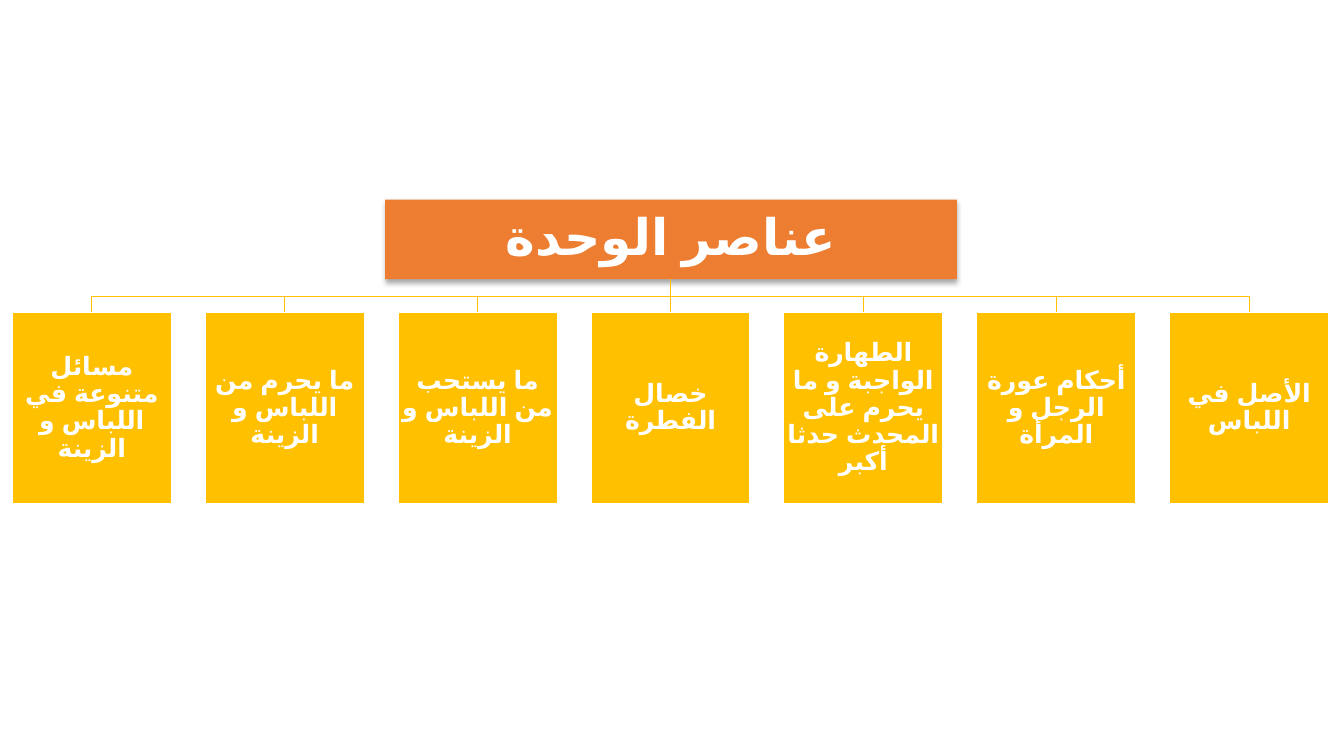
from dataclasses import dataclass
from lxml.etree import SubElement
from pptx import Presentation
from pptx.dml.color import RGBColor
from pptx.enum.shapes import MSO_SHAPE
from pptx.enum.text import MSO_ANCHOR, MSO_AUTO_SIZE, PP_ALIGN
from pptx.oxml import parse_xml
from pptx.oxml.ns import nsdecls, qn
from pptx.shapes.autoshape import Shape
from pptx.slide import Slide
from pptx.util import Inches, Pt

FONT, SCRIPT = "Calibri", "+mn-cs"
WHITE, GOLD, ORANGE = "FFFFFF", "FFC000", "ED7D31"
MID, STEP = 6.65, 11.48 / 6
BASE, BUS, TOP = 2.77, 2.94, 3.1
WIDE, TALL = 1.58, 1.9


@dataclass
class Topic:
    text: str
    slot: int

    @property
    def mid(self) -> float:
        return MID + self.slot * STEP


NAMES = [
    "مسائل متنوعة في اللباس و الزينة",
    "ما يحرم من اللباس و الزينة",
    "ما يستحب من اللباس و الزينة",
    "خصال الفطرة",
    "الطهارة الواجبة و ما يحرم على المحدث حدثا أكبر",
    "أحكام عورة الرجل و المرأة",
    "الأصل في اللباس",
]
TOPICS = [Topic(name, i - len(NAMES) // 2) for i, name in enumerate(NAMES)]


def color(code: str) -> RGBColor:
    return RGBColor.from_string(code)


def paint(shape: Shape, code: str) -> None:
    shape.fill.solid()
    shape.fill.fore_color.rgb = color(code)


def write(shape: Shape, text: str, size: int, inset: float) -> None:
    frame = shape.text_frame
    frame.word_wrap = True
    frame.auto_size = MSO_AUTO_SIZE.NONE
    frame.vertical_anchor = MSO_ANCHOR.MIDDLE
    frame.margin_left = frame.margin_right = Inches(inset)
    frame.margin_top = frame.margin_bottom = Inches(inset)
    para = frame.paragraphs[0]
    para.alignment = PP_ALIGN.CENTER
    para.line_spacing = 0.9
    para._p.get_or_add_pPr().set("rtl", "1")
    run = para.add_run()
    run.text = text
    run.font.size = Pt(size)
    run.font.bold = True
    run.font.color.rgb = color(WHITE)
    run.font.name = FONT
    props = run._r.get_or_add_rPr()
    props.set("lang", "ar-SA")
    SubElement(props, qn("a:cs")).set("typeface", SCRIPT)


def head(slide: Slide) -> None:
    title = slide.shapes.title
    title.left, title.top = Inches(3.82), Inches(1.98)
    title.width, title.height = Inches(5.67), Inches(0.79)
    paint(title, ORANGE)
    title.line.fill.background()
    title._element.spPr.append(parse_xml(
        f'<a:effectLst {nsdecls("a")}><a:outerShdw blurRad="{Pt(3.5)}" '
        f'dist="{Pt(2.2)}" dir="5400000" rotWithShape="0">'
        '<a:srgbClr val="000000"><a:alpha val="32000"/></a:srgbClr>'
        '</a:outerShdw></a:effectLst>'))
    write(title, "عناصر الوحدة", 36, 0.03)


def link(slide: Slide, topic: Topic) -> None:
    route = slide.shapes.build_freeform(Inches(MID), Inches(BASE))
    turns = [(MID, BUS), (topic.mid, BUS), (topic.mid, TOP)]
    route.add_line_segments(
        [(Inches(x), Inches(y)) for x, y in turns], close=False)
    wire = route.convert_to_shape()
    wire.fill.background()
    wire.shadow.inherit = False
    wire.line.color.rgb = color(GOLD)
    wire.line.width = Pt(1)


def card(slide: Slide, topic: Topic) -> None:
    box = slide.shapes.add_shape(
        MSO_SHAPE.RECTANGLE, Inches(topic.mid - WIDE / 2), Inches(TOP),
        Inches(WIDE), Inches(TALL))
    box.shadow.inherit = False
    paint(box, GOLD)
    box.line.color.rgb = color(WHITE)
    box.line.width = Pt(1)
    write(box, topic.text, 18, 0.01)


def main() -> None:
    deck = Presentation()
    deck.slide_width, deck.slide_height = Inches(13.33), Inches(7.5)
    slide = deck.slides.add_slide(deck.slide_layouts[5])
    head(slide)
    for topic in reversed(TOPICS):
        link(slide, topic)
    for topic in TOPICS:
        card(slide, topic)
    deck.save("out.pptx")


if __name__ == "__main__":
    main()
